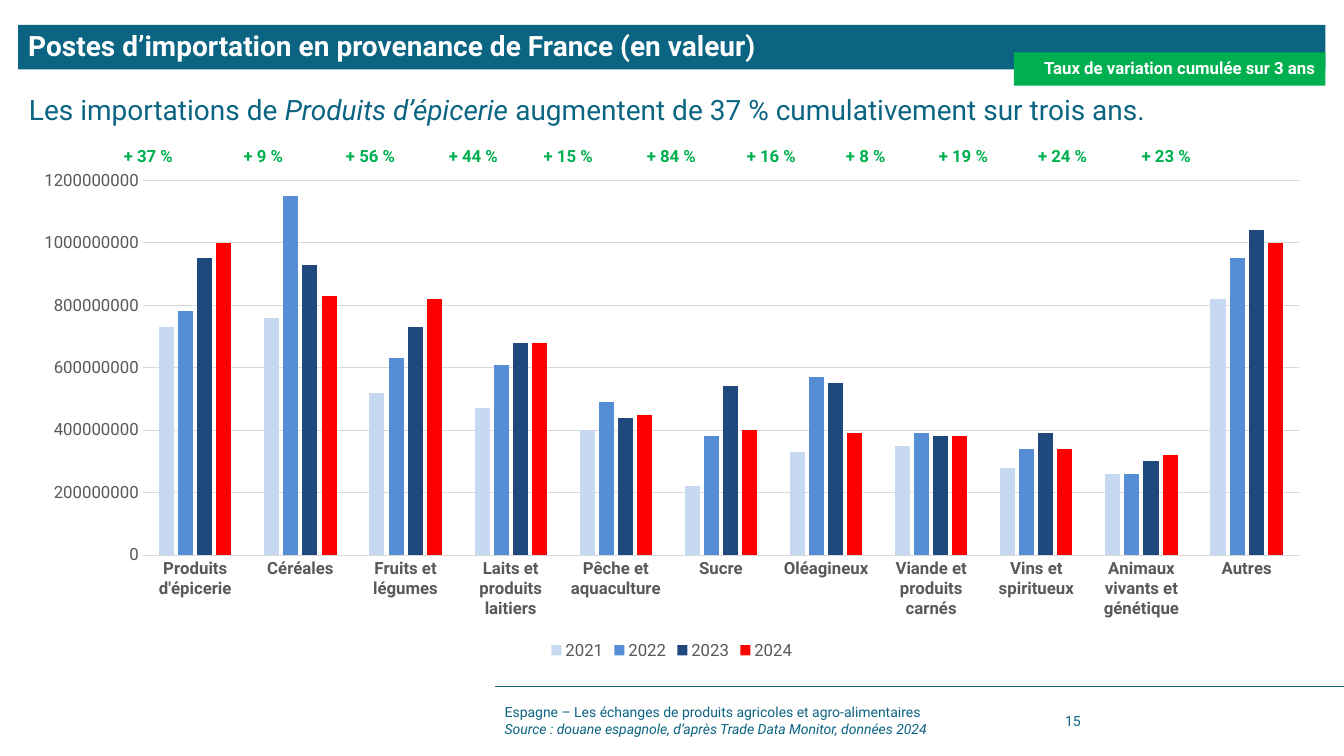
from lxml.etree import SubElement
from pptx import Presentation
from pptx.chart.data import CategoryChartData
from pptx.dml.color import RGBColor
from pptx.enum.chart import XL_CHART_TYPE, XL_LEGEND_POSITION, XL_TICK_MARK
from pptx.enum.shapes import MSO_CONNECTOR, MSO_SHAPE
from pptx.enum.text import MSO_ANCHOR, PP_ALIGN
from pptx.oxml.ns import qn
from pptx.util import Cm, Pt

FONT = "Roboto"
COLORS = {"teal": "0B6482", "green": "00B050", "white": "FFFFFF",
          "black": "000000", "gray": "595959", "grid": "D9D9D9"}
CATS = ["Produits d'épicerie", "Céréales", "Fruits et légumes",
        "Laits et produits laitiers", "Pêche et aquaculture", "Sucre",
        "Oléagineux", "Viande et produits carnés", "Vins et spiritueux",
        "Animaux vivants et génétique", "Autres"]
# Year: (fill, values in millions)
YEARS = {
    "2021": ("C6D9F1", [730, 760, 520, 470, 400, 220, 330, 350, 280, 260, 820]),
    "2022": ("558ED5", [780, 1150, 630, 610, 490, 380, 570, 390, 340, 260, 950]),
    "2023": ("1F497D", [950, 930, 730, 680, 440, 540, 550, 380, 390, 300, 1040]),
    "2024": ("FF0000", [1000, 830, 820, 680, 450, 400, 390, 380, 340, 320, 1000]),
}
MILLION = 10 ** 6
RATES = [37, 9, 56, 44, 15, 84, 16, 8, 19, 24, 23]
TABS = [3.02, 5.6, 8.19, 10.58, 13.18, 15.7, 18.2, 20.54, 23.04, 25.65]


def rgb(name):
    return RGBColor.from_string(COLORS[name])


def style(font, size, color, bold=False):
    font.name = FONT
    font.size = Pt(size)
    font.bold = bold
    font.color.rgb = rgb(color)


def add_box(slide, box, anchor=MSO_ANCHOR.TOP, fill=None):
    """Add a text box, or a filled rectangle, and return its text frame."""
    place = [Cm(length) for length in box]
    if fill:
        shape = slide.shapes.add_shape(MSO_SHAPE.RECTANGLE, *place)
        shape.shadow.inherit = False
        shape.fill.solid()
        shape.fill.fore_color.rgb = rgb(fill)
        shape.line.fill.background()
    else:
        shape = slide.shapes.add_textbox(*place)
    frame = shape.text_frame
    frame.word_wrap = True
    frame.vertical_anchor = anchor
    return frame


def add_banner(slide, box, text, size, fill, align):
    para = add_box(slide, box, MSO_ANCHOR.MIDDLE, fill).paragraphs[0]
    para.text = text
    para.alignment = align
    para.line_spacing = 0.9
    style(para.font, size, "white", True)


def add_header(slide, box):
    left, top, width, height = box
    add_banner(slide, (left, top, width, 1.12),
               "Postes d’importation en provenance de France (en valeur)",
               20, "teal", PP_ALIGN.LEFT)
    para = add_box(slide, (left + 0.02, top + height - 1, width, 1)).paragraphs[0]
    para.line_spacing = 0.8
    style(para.font, 20, "teal")
    for text, slant in [("Les importations de ", False),
                        ("Produits d’épicerie ", True),
                        ("augmentent de 37 % cumulativement sur trois ans.", False)]:
        run = para.add_run()
        run.text = text
        run.font.italic = slant
    tag = 7.85
    add_banner(slide, (left + width - tag, top + 0.69, tag, 0.84),
               "Taux de variation cumulée sur 3 ans", 12, "green", PP_ALIGN.RIGHT)


def add_rates(slide, box):
    """Set the growth rates on one line, each at its own tab stop."""
    para = add_box(slide, box).paragraphs[0]
    para.text = "\t".join(f"+ {rate} %" for rate in RATES)
    stops = SubElement(para._p.get_or_add_pPr(), qn("a:tabLst"))
    for stop in TABS:
        SubElement(stops, qn("a:tab"), pos=str(Cm(stop)), algn="l")
    style(para.font, 12, "green", True)


def add_bars(slide, box):
    data = CategoryChartData()
    data.categories = CATS
    for year, (_, values) in YEARS.items():
        data.add_series(year, [value * MILLION for value in values])
    chart = slide.shapes.add_chart(XL_CHART_TYPE.COLUMN_CLUSTERED,
                                   *[Cm(length) for length in box], data).chart
    style(chart.font, 12, "black")
    chart.has_title = False
    chart.has_legend = True
    chart.legend.position = XL_LEGEND_POSITION.BOTTOM
    chart.legend.include_in_layout = False
    style(chart.legend.font, 12, "gray")

    plot = chart.plots[0]
    plot.gap_width = 219
    plot.overlap = -27
    plot.vary_by_categories = False
    for series, (color, _) in zip(plot.series, YEARS.values()):
        series.format.fill.solid()
        series.format.fill.fore_color.rgb = RGBColor.from_string(color)

    cat, val = chart.category_axis, chart.value_axis
    for axis in (cat, val):
        axis.major_tick_mark = axis.minor_tick_mark = XL_TICK_MARK.NONE
        style(axis.tick_labels.font, 12, "gray", axis is cat)
    val.minimum_scale = 0
    val.maximum_scale = 1200 * MILLION
    val.major_unit = 200 * MILLION
    val.tick_labels.number_format = "General"
    val.tick_labels.number_format_is_linked = False
    val.format.line.fill.background()
    for line in (cat.format.line, val.major_gridlines.format.line):
        line.color.rgb = rgb("grid")
        line.width = Pt(0.75)


def add_footer(slide, box):
    left, top, width, height = box
    rule = slide.shapes.add_connector(MSO_CONNECTOR.STRAIGHT, Cm(left + width),
                                      Cm(top), Cm(left), Cm(top))
    rule.line.color.rgb = rgb("teal")
    rule.line.width = Pt(0.5)
    SubElement(rule._element.spPr, qn("a:effectLst"))
    source = ["Espagne – Les échanges de produits agricoles et agro-alimentaires",
              "Source : douane espagnole, d’après Trade Data Monitor, données 2024"]
    for shift, wide, lines in [(0, 13.79, source), (14.12, 2.51, ["15"])]:
        frame = add_box(slide, (left + shift, top + height - 1.02, wide, 1.02),
                        MSO_ANCHOR.MIDDLE)
        frame.text = "\n".join(lines)
        for index, para in enumerate(frame.paragraphs):
            style(para.font, 10, "teal")
            para.font.italic = index == 1


def main():
    deck = Presentation()
    deck.slide_width, deck.slide_height = Cm(33.87), Cm(19.05)
    slide = deck.slides.add_slide(deck.slide_layouts[6])
    add_footer(slide, (12.47, 17.3, 21.4, 1.37))
    add_header(slide, (0.46, 0.63, 32.94, 2.73))
    add_bars(slide, (0.46, 4.04, 32.94, 12.7))
    add_rates(slide, (2.87, 3.56, 30, 1))
    deck.save("out.pptx")


if __name__ == "__main__":
    main()
